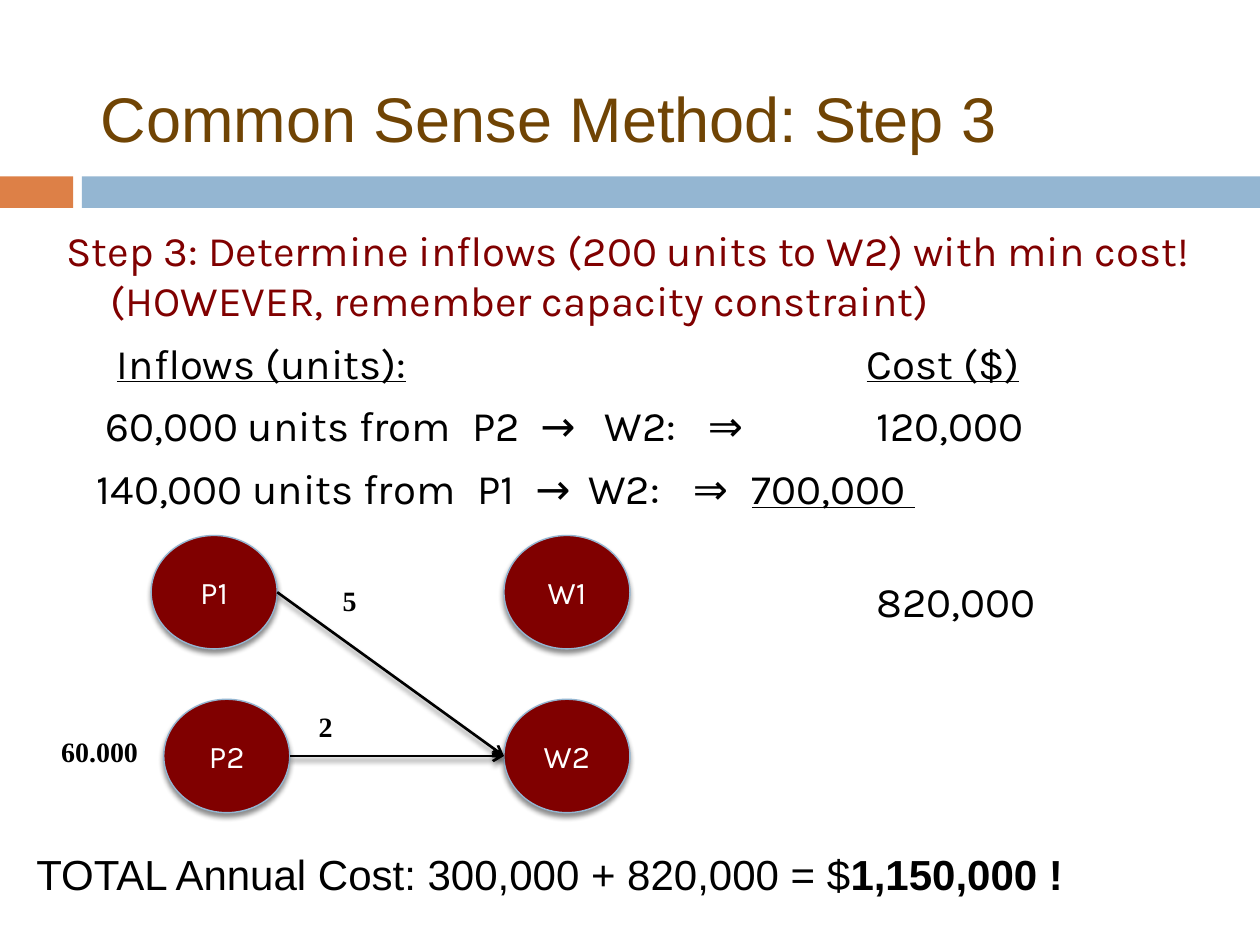
"""Build the Common Sense Method slide: inflow costs and a plant-to-warehouse network."""
from lxml.etree import SubElement as Sub
from pptx import Presentation
from pptx.dml.color import RGBColor as RGB
from pptx.enum.shapes import MSO_CONNECTOR as Line, MSO_SHAPE as Shape
from pptx.enum.text import MSO_ANCHOR as Anchor, PP_ALIGN as Align
from pptx.oxml.ns import qn
from pptx.util import Inches, Pt

HUES = {"orange": "DD8047", "blue": "94B6D2", "red": "800000",
        "brown": "704404", "black": "000000", "white": "FFFFFF"}
BARS = [(0, 0.58, "orange"), (0.65, 9.35, "blue")]
TITLE = "Common Sense Method: Step 3"
STEP = ("Step 3: Determine inflows (200 units to W2) with min cost! "
        "(HOWEVER, remember capacity constraint)")
ROWS = [
    (7, [(0.4, "Inflows (units):", True), (6.35, "Cost ($)", True)]),
    (7, [(0.31, "60,000 units from", False), (3.22, "P2", False), (3.76, "→", False),
         (4.27, "W2:", False), (5.09, "⇒", False), (6.43, "120,000", False)]),
    (7, [(0.24, "140,000 units from", False), (3.26, "P1", False), (3.72, "→", False),
         (4.14, "W2:", False), (4.97, "⇒", False), (5.44, "700,000 ", True)]),
    (36, [(6.43, "820,000", False)]),
]
TOTAL = [("TOTAL Annual Cost: 300,000 + 820,000 = $", False), ("1,150,000 !", True)]
NODES = {"P1": (1.2, 4.25), "P2": (1.3, 5.55), "W1": (4, 4.25), "W2": (4, 5.55)}
WIDE, HIGH = 1, 0.9
LINKS = [("P1", "W2"), ("P2", "W2")]
NOTES = [("2", 2.37, 5.58, 0.43), ("5", 2.56, 4.58, 0.43), ("60.000", 0.3, 5.78, 0.98)]


def hue(name):
    return RGB.from_string(HUES[name])


def style(para, face, size, color, bold=None):
    font = para.font
    font.name, font.size, font.bold = face, Pt(size), bold
    font.color.rgb = hue(color)


def box(slide, *area):
    frame = slide.shapes.add_textbox(*map(Inches, area)).text_frame
    frame.word_wrap = True
    return frame


def shade(part):
    props = part._element.spPr
    for old in props.findall(qn("a:effectLst")):
        props.remove(old)
    glow = Sub(Sub(props, qn("a:effectLst")), qn("a:outerShdw"), blurRad=str(Pt(3)),
               dist=str(Pt(2.4)), dir="5400000", rotWithShape="0")
    tint = Sub(glow, qn("a:srgbClr"), val=HUES["black"])
    Sub(tint, qn("a:alpha"), val="45000")


def add_bars(slide):
    for left, width, color in BARS:
        bar = slide.shapes.add_shape(Shape.RECTANGLE, *map(Inches, (left, 1.4, width, 0.25)))
        bar.shadow.inherit = False
        bar.fill.solid()
        bar.fill.fore_color.rgb = hue(color)
        bar.line.fill.background()


def add_body(slide):
    frame = box(slide, 0.43, 1.73, 9.17, 2.82)
    head = frame.paragraphs[0]
    head.text = STEP
    head.space_before = Pt(7)
    props = head._p.get_or_add_pPr()
    props.set("marL", str(Inches(0.35)))
    props.set("indent", str(-Inches(0.35)))
    style(head, "Karla", 24, "red")
    for gap, cells in ROWS:
        para = frame.add_paragraph()
        para.space_before = Pt(gap)
        stops = Sub(para._p.get_or_add_pPr(), qn("a:tabLst"))
        for stop, text, under in cells:
            Sub(stops, qn("a:tab"), pos=str(Inches(stop)), algn="l")
            para.add_run().text = "\t"
            run = para.add_run()
            run.text = text
            if under:
                run.font.underline = True
        style(para, "Karla", 24, "black")


def add_title(slide):
    frame = box(slide, 0.7, 0.41, 8.52, 1.04)
    frame.vertical_anchor = Anchor.MIDDLE
    frame.text = TITLE
    style(frame.paragraphs[0], "Arial", 36, "brown")


def add_total(slide):
    para = box(slide, 0.19, 6.73, 8.75, 0.47).paragraphs[0]
    para.line_spacing, para.space_before = 0.9, Pt(4.8)
    for text, bold in TOTAL:
        run = para.add_run()
        run.text, run.font.bold = text, bold
    style(para, "Arial", 24, "black")


def add_notes(slide):
    for text, left, top, width in NOTES:
        para = box(slide, left, top, width, 0.37).paragraphs[0]
        para.text, para.alignment, para.space_before = text, Align.CENTER, Pt(8)
        style(para, "Times New Roman", 16, "black", True)


def add_graph(slide):
    for name, (left, top) in NODES.items():
        node = slide.shapes.add_shape(Shape.OVAL, *map(Inches, (left, top, WIDE, HIGH)))
        node.fill.solid()
        node.fill.fore_color.rgb = hue("red")
        node.line.color.rgb = hue("blue")
        node.line.width = Pt(0.79)
        shade(node)
        frame = node.text_frame
        frame.vertical_anchor = Anchor.MIDDLE
        frame.text = name
        para = frame.paragraphs[0]
        para.alignment = Align.CENTER
        style(para, "Karla", 18, "white")
    for start, end in LINKS:
        (left, top), (right, low) = NODES[start], NODES[end]
        ends = (left + WIDE, top + HIGH / 2, right, low + HIGH / 2)
        link = slide.shapes.add_connector(Line.STRAIGHT, *map(Inches, ends))
        link.line.color.rgb = hue("black")
        link.line.width = Pt(1.5)
        Sub(link.line._get_or_add_ln(), qn("a:tailEnd"), type="arrow")
        shade(link)


def main():
    deck = Presentation()
    deck.slide_width, deck.slide_height = Inches(10), Inches(7.5)
    slide = deck.slides.add_slide(deck.slide_layouts[6])
    for add in (add_bars, add_body, add_title, add_total, add_notes, add_graph):
        add(slide)
    deck.save("out.pptx")


if __name__ == "__main__":
    main()
